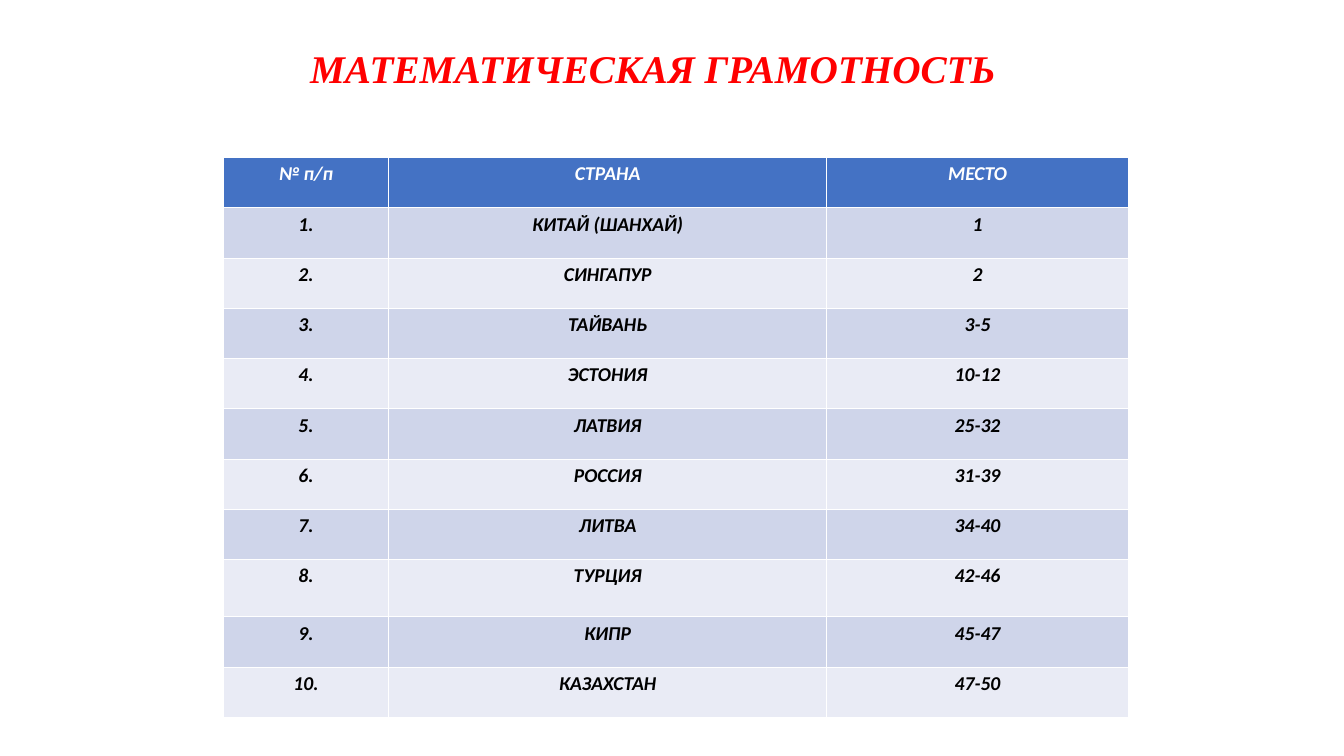
"""Build a slide ranking countries by mathematical literacy."""
from pptx import Presentation
from pptx.dml.color import RGBColor
from pptx.enum.text import PP_ALIGN
from pptx.util import Cm, Pt

CENTER = PP_ALIGN.CENTER
RED = RGBColor(0xFF, 0x00, 0x00)
WHITE = RGBColor(0xFF, 0xFF, 0xFF)
BLACK = RGBColor(0x00, 0x00, 0x00)
BLUE = RGBColor(0x44, 0x72, 0xC4)
BANDS = (RGBColor(0xE9, 0xEB, 0xF5), RGBColor(0xCF, 0xD5, 0xEA))

TITLE = "МАТЕМАТИЧЕСКАЯ ГРАМОТНОСТЬ"
HEADER = ("№ п/п", "СТРАНА", "МЕСТО")
RANKING = [
    ("КИТАЙ (ШАНХАЙ)", "1"),
    ("СИНГАПУР", "2"),
    ("ТАЙВАНЬ", "3-5"),
    ("ЭСТОНИЯ", "10-12"),
    ("ЛАТВИЯ", "25-32"),
    ("РОССИЯ", "31-39"),
    ("ЛИТВА", "34-40"),
    ("ТУРЦИЯ", "42-46"),
    ("КИПР", "45-47"),
    ("КАЗАХСТАН", "47-50"),
]
COL_WIDTHS = (6.25, 16.56, 11.4)
ROW_HEIGHT = 1.9
TALL_ROW, TALL_HEIGHT = 8, 2.17


def write(tf, text, font, size, color):
    tf.margin_left = tf.margin_right = Cm(0.38)
    tf.margin_top = tf.margin_bottom = Cm(0.18)
    tf.text = text
    p = tf.paragraphs[0]
    p.alignment = CENTER
    f = p.runs[0].font
    f.name, f.size, f.bold, f.italic = font, Pt(size), True, True
    f.color.rgb = color


def add_title(s):
    tf = s.shapes.add_textbox(Cm(9.8), Cm(1.5), Cm(29.77), Cm(2.06)).text_frame
    tf.word_wrap = True
    write(tf, TITLE, "Times New Roman", 42, RED)


def add_ranking(s):
    rows = [HEADER] + [(f"{n}.", *row) for n, row in enumerate(RANKING, 1)]
    heights = [ROW_HEIGHT] * len(rows)
    heights[TALL_ROW] = TALL_HEIGHT
    table = s.shapes.add_table(
        len(rows), len(HEADER), Cm(8.44), Cm(5.95),
        Cm(sum(COL_WIDTHS)), Cm(sum(heights))).table
    for col, width in zip(table.columns, COL_WIDTHS):
        col.width = Cm(width)
    for i, (row, height) in enumerate(zip(rows, heights)):
        table.rows[i].height = Cm(height)
        for j, text in enumerate(row):
            cell = table.cell(i, j)
            cell.fill.solid()
            cell.fill.fore_color.rgb = BANDS[i % 2] if i else BLUE
            write(cell.text_frame, text, "Calibri", 21, BLACK if i else WHITE)
            cell.margin_left = cell.margin_right = Cm(0.38)
            cell.margin_top = cell.margin_bottom = Cm(0.18)


def main():
    prs = Presentation()
    prs.slide_width, prs.slide_height = Cm(50.8), Cm(28.58)
    s = prs.slides.add_slide(prs.slide_layouts[6])
    add_title(s)
    add_ranking(s)
    prs.save("out.pptx")


if __name__ == "__main__":
    main()
